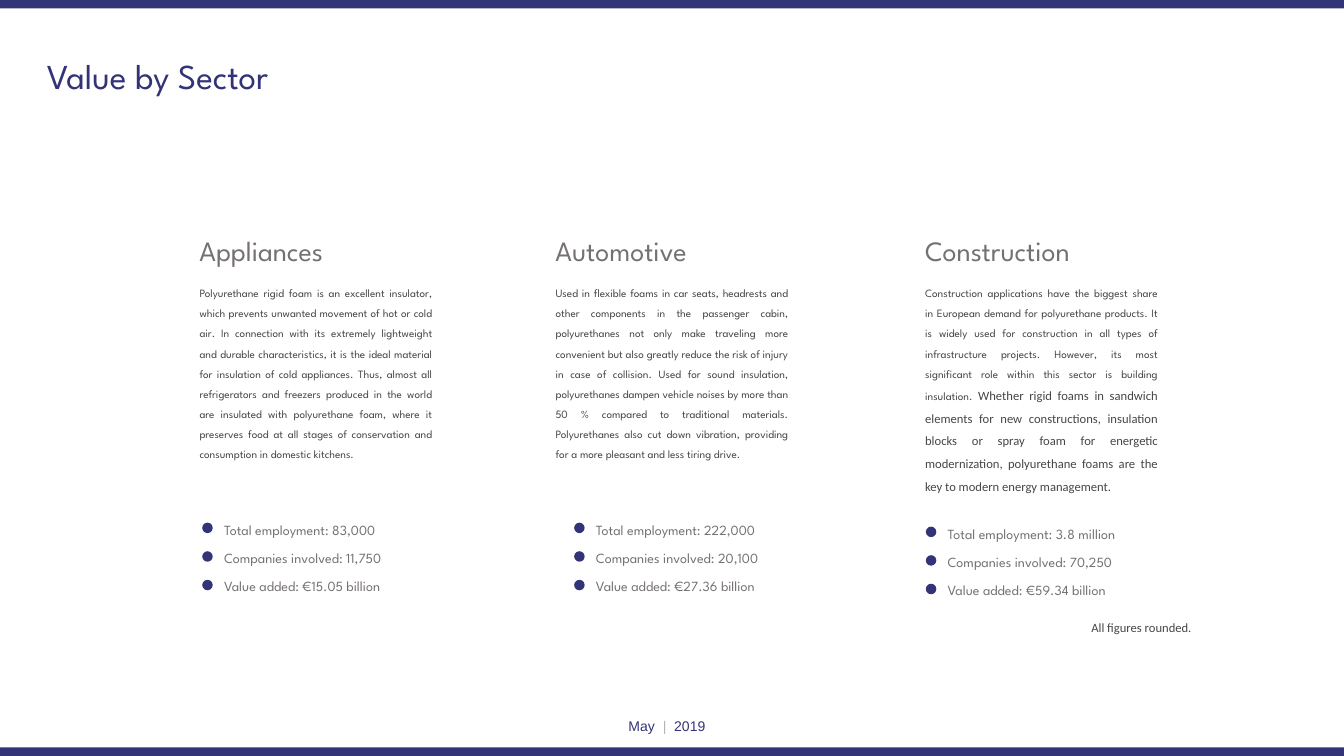
"""Build the "Value by Sector" slide with three columns of key figures."""
from dataclasses import dataclass

from lxml.etree import SubElement
from pptx import Presentation
from pptx.dml.color import RGBColor
from pptx.enum.shapes import MSO_SHAPE as Preset
from pptx.enum.text import MSO_ANCHOR as Anchor, MSO_AUTO_SIZE as AutoSize, PP_ALIGN as Align
from pptx.oxml.ns import qn
from pptx.shapes.base import BaseShape
from pptx.slide import Slide
from pptx.text.text import TextFrame, _Paragraph as Paragraph
from pptx.util import Cm, Pt

NAVY, GREY, DARK, PALE = "333377", "767171", "464646", "B4B4B4"
SPARTAN, CALIBRI, ARIAL = "League Spartan", "Calibri", "Arial"
WIDTH, HEIGHT, BAR_HEIGHT = 67.72, 38.1, 0.43
DOT_SIZE, DOT_PITCH, DOT_DROP = 0.53, 1.44, 0.2
FACT_PITCH, FACT_INDENT = 1.42, 0.85


@dataclass(frozen=True)
class Box:
    left: float
    top: float
    width: float
    height: float


@dataclass(frozen=True)
class Span:
    text: str
    size: float
    color: str
    font: str = SPARTAN
    tracking: float = 0


@dataclass(frozen=True)
class Sector:
    name: str
    left: float
    description: list[Span]
    list_left: float
    list_top: float
    employment: str
    companies: str
    value: str


SECTORS = [
    Sector(
        "Appliances", 9.8,
        [Span("Polyurethane rigid foam is an excellent insulator, which prevents unwanted "
              "movement of hot or cold air. In connection with its extremely lightweight and "
              "durable characteristics, it is the ideal material for insulation of cold "
              "appliances. Thus, almost all refrigerators and freezers produced in the world "
              "are insulated with polyurethane foam, where it preserves food at all stages of "
              "conservation and consumption in domestic kitchens.", 16, DARK)],
        10.19, 26.14, "83,000", "11,750", "€15.05 billion"),
    Sector(
        "Automotive", 27.74,
        [Span("Used in flexible foams in car seats, headrests and other components in the "
              "passenger cabin, polyurethanes not only make traveling more convenient but also "
              "greatly reduce the risk of injury in case of collision. Used for sound "
              "insulation, polyurethanes dampen vehicle noises by more than 50 % compared to "
              "traditional materials. Polyurethanes also cut down vibration, providing for a "
              "more pleasant and less tiring drive.", 16, DARK)],
        28.93, 26.14, "222,000", "20,100", "€27.36 billion"),
    Sector(
        "Construction", 46.36,
        [Span("Construction applications have the biggest share in European demand for "
              "polyurethane products. It is widely used for construction in all types of "
              "infrastructure projects. However, its most significant role within this sector "
              "is building insulation. ", 16, DARK),
         Span("Whether rigid foams in sandwich elements for new constructions, insulation "
              "blocks or spray foam for energetic modernization, polyurethane foams are the "
              "key to modern energy management.", 18, DARK, CALIBRI)],
        46.65, 26.34, "3.8 million", "70,250", "€59.34 billion"),
]


def rgb(color: str) -> RGBColor:
    return RGBColor.from_string(color)


def place(shape: BaseShape, box: Box) -> None:
    shape.left, shape.top = Cm(box.left), Cm(box.top)
    shape.width, shape.height = Cm(box.width), Cm(box.height)


def prepare(frame: TextFrame, wrap: bool = True) -> None:
    frame.word_wrap = wrap
    frame.auto_size = AutoSize.NONE
    frame.vertical_anchor = Anchor.TOP


def write(paragraph: Paragraph, spans: list[Span], align: Align = Align.LEFT) -> None:
    paragraph.alignment = align
    paragraph.space_before = Pt(0)
    for span in spans:
        run = paragraph.add_run()
        run.text = span.text
        run.font.name, run.font.size, run.font.bold = span.font, Pt(span.size), False
        run.font.color.rgb = rgb(span.color)
        if span.tracking:
            run.font._element.set("spc", str(round(span.tracking * 100)))


def add_text(slide: Slide, box: Box, spans: list[Span], align: Align = Align.LEFT,
             wrap: bool = True) -> None:
    frame = slide.shapes.add_textbox(
        Cm(box.left), Cm(box.top), Cm(box.width), Cm(box.height)).text_frame
    prepare(frame, wrap)
    write(frame.paragraphs[0], spans, align)


def add_solid(slide: Slide, preset: Preset, box: Box) -> None:
    shape = slide.shapes.add_shape(
        preset, Cm(box.left), Cm(box.top), Cm(box.width), Cm(box.height))
    shape.shadow.inherit = False
    shape.fill.solid()
    shape.fill.fore_color.rgb = rgb(NAVY)
    shape.line.fill.background()


def fill_description(body: BaseShape, sector: Sector) -> None:
    place(body, Box(sector.left, 13.97, 12.24, 11.4))
    prepare(body.text_frame)
    paragraph = body.text_frame.paragraphs[0]
    properties = paragraph._p.get_or_add_pPr()
    properties.set("marL", "0")
    properties.set("indent", "0")
    SubElement(properties, qn("a:buNone"))
    write(paragraph, sector.description, Align.JUSTIFY)
    paragraph.line_spacing = 1.5


def add_facts(slide: Slide, sector: Sector) -> None:
    facts = [f"Total employment: {sector.employment}",
             f"Companies involved: {sector.companies}",
             f"Value added: {sector.value}"]
    for row, fact in enumerate(facts):
        dot_top = sector.list_top + DOT_DROP + row * DOT_PITCH
        add_solid(slide, Preset.OVAL, Box(sector.list_left, dot_top, DOT_SIZE, DOT_SIZE))
        add_text(slide, Box(sector.list_left + FACT_INDENT,
                            sector.list_top + row * FACT_PITCH, 11.02, 1.12),
                 [Span(fact, 20, GREY)])


def main() -> None:
    presentation = Presentation()
    presentation.slide_width, presentation.slide_height = Cm(WIDTH), Cm(HEIGHT)
    slide = presentation.slides.add_slide(presentation.slide_layouts.get_by_name("Comparison"))
    title, *bodies = slide.placeholders

    for top in (0, HEIGHT - BAR_HEIGHT):
        add_solid(slide, Preset.RECTANGLE, Box(0, top, WIDTH, BAR_HEIGHT))
    gap = Span(" ", 20, PALE, ARIAL, 5.56)
    add_text(slide, Box(22.91, 36.04, 21.39, 1.12),
             [Span("May", 20, NAVY, ARIAL), gap, Span("|", 20, PALE, ARIAL), gap,
              Span("2019", 20, NAVY, ARIAL)], Align.CENTER)

    place(title, Box(2.11, 2.62, 18, 2.39))
    prepare(title.text_frame)
    write(title.text_frame.paragraphs[0], [Span("Value by Sector", 50, NAVY)])

    for sector, body in zip(SECTORS, bodies):
        add_text(slide, Box(sector.left, 11.63, 10.72, 1.96), [Span(sector.name, 40, GREY)])
        fill_description(body, sector)
        add_facts(slide, sector)
    for body in bodies[len(SECTORS):]:
        body.element.getparent().remove(body.element)

    add_text(slide, Box(54.74, 31.12, 5.61, 1.02),
             [Span("All figures rounded.", 18, DARK, CALIBRI)], wrap=False)
    presentation.save("out.pptx")


if __name__ == "__main__":
    main()
